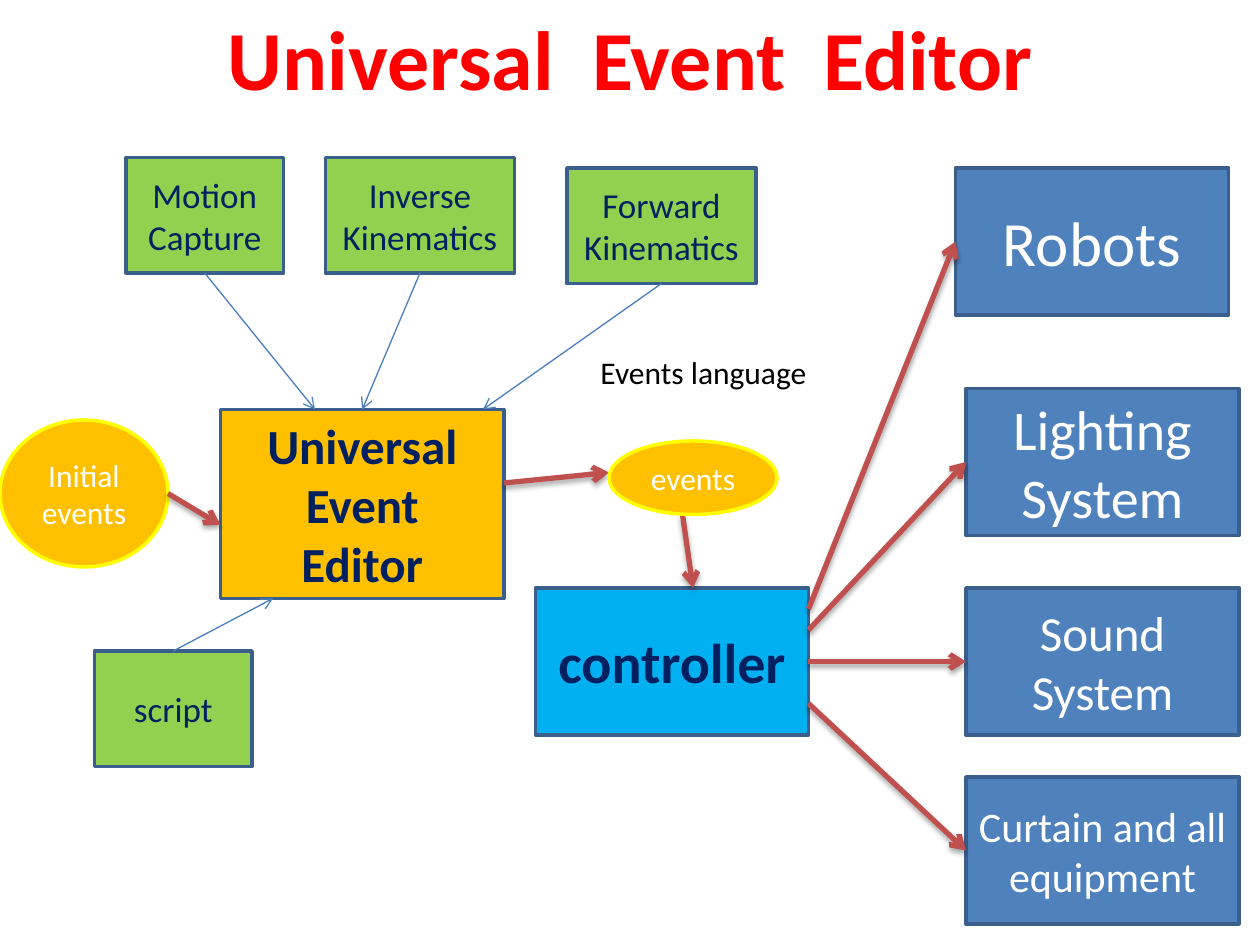
from lxml.etree import SubElement
from pptx import Presentation
from pptx.dml.color import RGBColor
from pptx.enum.shapes import MSO_CONNECTOR, MSO_SHAPE
from pptx.enum.text import MSO_ANCHOR, MSO_AUTO_SIZE, PP_ALIGN
from pptx.oxml.ns import qn
from pptx.util import Pt

COLORS = {
    "title": "FF0000", "label": "000000", "navy": "002060", "white": "FFFFFF",
    "device": "4F81BD", "controller": "00B0F0", "editor": "FFC000",
    "input": "92D050", "box_edge": "3A5F8C", "oval_edge": "FFFF00",
    "input_arrow": "4B7EBC", "flow_arrow": "C0504D", "shadow": "000000",
}
FONT = "Calibri"
TOP, LEFT, BOTTOM, RIGHT = range(4)


def rgb(name):
    return RGBColor.from_string(COLORS[name])


def add_run(paragraph, text, size, color, bold=False):
    run = paragraph.add_run()
    run.text = text
    run.font.name = FONT
    run.font.size = Pt(size)
    run.font.bold = bold
    run.font.color.rgb = rgb(color)
    return run


def add_title(slide, words, size=48):
    title = slide.shapes.title
    title.left, title.top, title.width, title.height = Pt(0), Pt(0), Pt(720), Pt(65.5)
    frame = title.text_frame
    frame.word_wrap = True
    frame.auto_size = MSO_AUTO_SIZE.NONE
    frame.vertical_anchor = MSO_ANCHOR.TOP
    paragraph = frame.paragraphs[0]
    paragraph.alignment = PP_ALIGN.CENTER
    for index, word in enumerate(words):
        if index:
            # A widened space sets the words apart
            gap = add_run(paragraph, " ", size, "title", True)
            gap.font._element.set("spc", "1085")
        add_run(paragraph, word, size, "title", True)


def add_label(slide, text, left, top, width, height):
    frame = slide.shapes.add_textbox(Pt(left), Pt(top), Pt(width), Pt(height)).text_frame
    frame.word_wrap = True
    add_run(frame.paragraphs[0], text, 18, "label")


def add_node(slide, lines, place, size, fill, color, bold=False,
             preset=MSO_SHAPE.RECTANGLE, edge="box_edge"):
    node = slide.shapes.add_shape(preset, *(Pt(length) for length in place))
    node.shadow.inherit = False
    node.fill.solid()
    node.fill.fore_color.rgb = rgb(fill)
    node.line.color.rgb = rgb(edge)
    node.line.width = Pt(2)
    frame = node.text_frame
    frame.word_wrap = True
    frame.vertical_anchor = MSO_ANCHOR.MIDDLE
    for index, line in enumerate(lines):
        paragraph = frame.add_paragraph() if index else frame.paragraphs[0]
        paragraph.alignment = PP_ALIGN.CENTER
        add_run(paragraph, line, size, color, bold)
    return node


def add_oval(slide, text, place):
    add_node(slide, [text], place, 18, "editor", "white",
             preset=MSO_SHAPE.OVAL, edge="oval_edge")


def add_arrow(slide, start, end, color, width, source=None, target=None):
    """source and target are (node, side) pairs for ends at the middle of a side."""
    arrow = slide.shapes.add_connector(
        MSO_CONNECTOR.STRAIGHT, *(Pt(length) for length in (*start, *end)))
    if source:
        arrow.begin_connect(*source)
    if target:
        arrow.end_connect(*target)
    arrow.line.color.rgb = rgb(color)
    arrow.line.width = Pt(width)
    SubElement(arrow.line._get_or_add_ln(), qn("a:tailEnd"), type="arrow")
    return SubElement(arrow._element.spPr, qn("a:effectLst"))


def add_input_arrow(slide, start, end, source):
    add_arrow(slide, start, end, "input_arrow", 0.75, source)


def add_flow_arrow(slide, start, end, source=None, target=None):
    effects = add_arrow(slide, start, end, "flow_arrow", 3, source, target)
    shadow = SubElement(effects, qn("a:outerShdw"), blurRad=str(Pt(3.1)),
                        dist=str(Pt(1.8)), dir="5400000", rotWithShape="0")
    shade = SubElement(shadow, qn("a:srgbClr"), val=COLORS["shadow"])
    SubElement(shade, qn("a:alpha"), val="35000")


def main():
    deck = Presentation()
    deck.slide_width, deck.slide_height = Pt(720), Pt(540)
    slide = deck.slides.add_slide(deck.slide_layouts[5])
    add_title(slide, ["Universal", "Event", "Editor"])

    # Editor and controller
    add_node(slide, ["Universal Event", "Editor"], (126, 234, 162, 108),
             28, "editor", "navy", True)
    controller = add_node(slide, ["controller"], (306, 336, 156, 84),
                          32, "controller", "navy", True)
    add_label(slide, "Events language", 336, 198, 132, 51)

    # Inputs, each with an arrow from its side to the editor
    for lines, left, top, width, side, end in (
        (["Motion Capture"], 72, 90, 90, BOTTOM, (180, 234)),
        (["Inverse", "Kinematics"], 186, 90, 108, BOTTOM, (207, 234)),
        (["Forward", "Kinematics"], 324, 96, 108, BOTTOM, (276, 234)),
        (["script"], 54, 372, 90, TOP, (156, 342)),
    ):
        height = 66
        source = add_node(slide, lines, (left, top, width, height), 20, "input", "navy")
        start = (left + width / 2, top + (height if side == BOTTOM else 0))
        add_input_arrow(slide, start, end, (source, side))

    # Devices, each driven by an arrow from the controller's right side
    for lines, left, top, size, start_y in (
        (["Robots"], 546, 96, 36, 348),
        (["Lighting", "System"], 552, 222, 32, 360),
        (["Sound System"], 552, 336, 28, 378),
        (["Curtain and all equipment"], 552, 444, 24, 402),
    ):
        device = add_node(slide, lines, (left, top, 156, 84), size, "device", "white")
        source = (controller, RIGHT) if start_y == 378 else None
        add_flow_arrow(slide, (462, start_y), (left, top + 42), source, (device, LEFT))

    # Events passing through the editor to the controller
    add_flow_arrow(slide, (288, 276), (348, 270))
    add_flow_arrow(slide, (390, 294), (396, 336))
    add_oval(slide, "events", (348, 252, 96, 42))
    add_oval(slide, "Initial events", (0, 240, 96, 84))
    add_flow_arrow(slide, (96, 282), (126, 300))

    deck.save("out.pptx")


if __name__ == "__main__":
    main()
